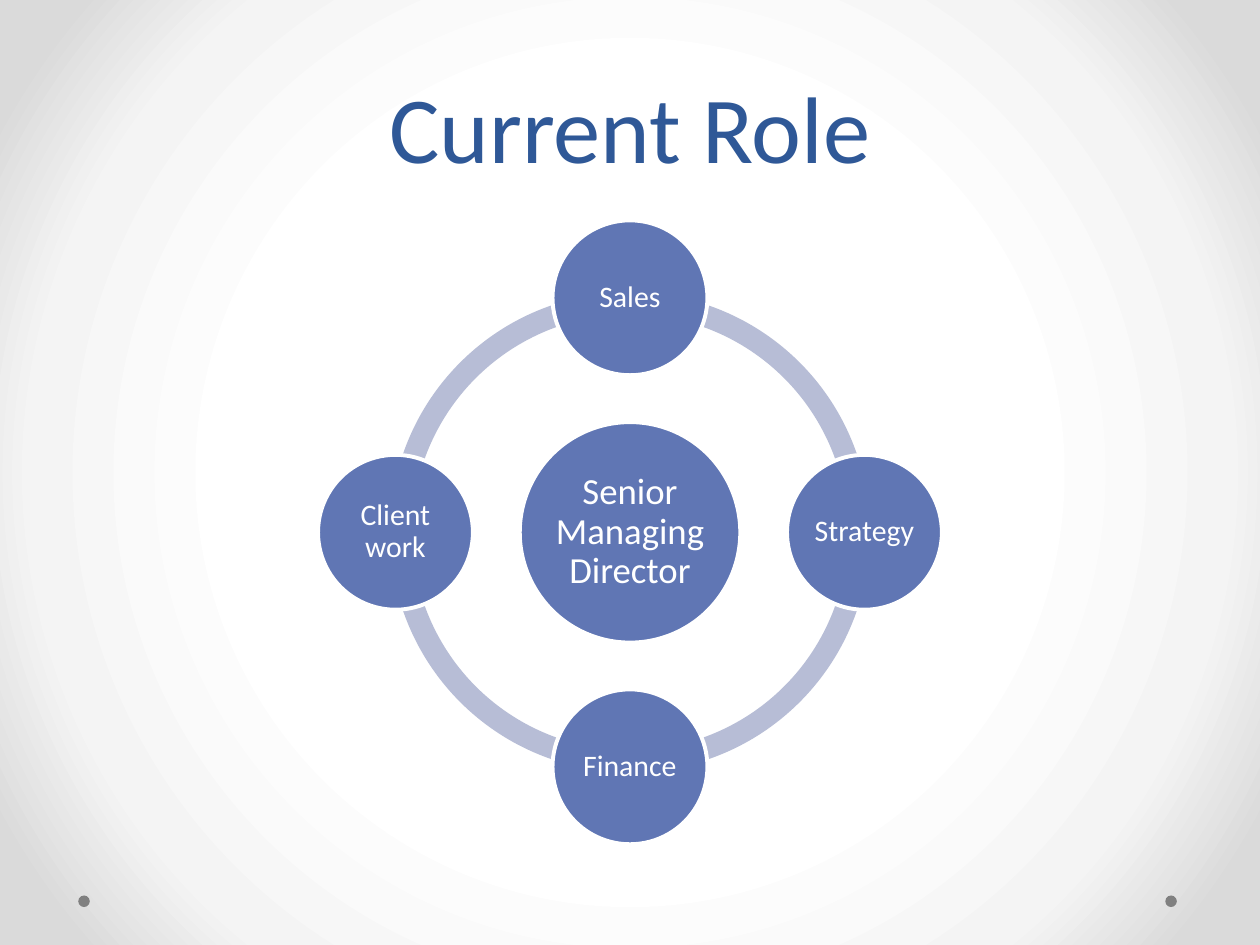
from math import cos, pi, sin

from lxml.etree import SubElement
from pptx import Presentation
from pptx.dml.color import RGBColor
from pptx.enum.shapes import MSO_SHAPE
from pptx.enum.text import MSO_ANCHOR, PP_ALIGN
from pptx.oxml.ns import qn
from pptx.util import Pt

WHITE = RGBColor(0xFF, 0xFF, 0xFF)
BLUE = RGBColor(0x60, 0x76, 0xB4)
PALE_BLUE = RGBColor(0xB7, 0xBD, 0xD6)
NAVY = RGBColor(0x2F, 0x58, 0x97)
GREY = RGBColor(0x80, 0x80, 0x80)
BACKGROUND = [(50, "FFFFFF"), (76, "F4F4F4"), (92, "DADADA")]

CENTRE_X, CENTRE_Y = 360, 304.2
HUB_SIZE, ROLE_SIZE, RING_SIZE, ORBIT = 126, 88.5, 274.4, 134
ROLES = ["Sales", "Strategy", "Finance", "Client work"]
QUARTER = 54


def set_text(shape, text, size, color, spacing=0.9, inset=1.5,
             anchor=MSO_ANCHOR.MIDDLE, font="Calibri"):
    tf = shape.text_frame
    tf.word_wrap = True
    tf.vertical_anchor = anchor
    tf.margin_left = tf.margin_right = Pt(inset)
    tf.margin_top = tf.margin_bottom = Pt(inset)
    p = tf.paragraphs[0]
    p.alignment = PP_ALIGN.CENTER
    p.line_spacing = spacing
    r = p.add_run()
    r.text = text
    r.font.name = font
    r.font.size = Pt(size)
    r.font.color.rgb = color


class RoleSlide:
    """Draw the elements of a radial role diagram on one slide."""

    def __init__(self, prs):
        self.s = prs.slides.add_slide(prs.slide_layouts[6])
        self.diagram = None

    def background(self, stops):
        fill = self.s.background.fill
        fill.gradient()
        grad = self.s.element.find(".//" + qn("a:gradFill"))
        for child in list(grad):
            grad.remove(child)
        stop_list = SubElement(grad, qn("a:gsLst"))
        for position, color in stops:
            stop = SubElement(stop_list, qn("a:gs"), pos=str(position * 1000))
            SubElement(stop, qn("a:srgbClr"), val=color)
        shade = SubElement(grad, qn("a:path"), path="circle")
        SubElement(shade, qn("a:fillToRect"),
                   {side: "50000" for side in "ltrb"})

    def title(self, text):
        box = self.s.shapes.add_textbox(Pt(36), Pt(12), Pt(648), Pt(96))
        set_text(box, text, 54, NAVY, spacing=Pt(58), inset=3.6,
                 anchor=MSO_ANCHOR.BOTTOM)

    def start_diagram(self):
        self.diagram = self.s.shapes.add_group_shape()

    def centred(self, kind, x, y, size, color, shapes=None):
        shapes = shapes or self.s.shapes
        shape = shapes.add_shape(kind, Pt(x - size / 2), Pt(y - size / 2),
                                 Pt(size), Pt(size))
        shape.shadow.inherit = False
        shape.fill.solid()
        shape.fill.fore_color.rgb = color
        shape.line.fill.background()
        return shape

    def dot(self, x):
        self.centred(MSO_SHAPE.OVAL, x, 515, 6.6, GREY)

    def arc(self, start, end):
        arc = self.centred(MSO_SHAPE.BLOCK_ARC, CENTRE_X, CENTRE_Y, RING_SIZE,
                           PALE_BLUE, self.diagram.shapes)
        for i, value in enumerate((start, end, 0.046)):
            arc.adjustments[i] = value

    def circle(self, text, x, y, size, font_size):
        circle = self.centred(MSO_SHAPE.OVAL, x, y, size, BLUE,
                              self.diagram.shapes)
        circle.line.color.rgb = WHITE
        circle.line.width = Pt(2.25)
        set_text(circle, text, font_size, WHITE)


def main():
    prs = Presentation()
    prs.slide_width, prs.slide_height = Pt(720), Pt(540)
    slide = RoleSlide(prs)
    slide.background(BACKGROUND)
    for x in (669.2, 48):
        slide.dot(x)
    slide.start_diagram()
    for i in range(4):
        slide.arc(i * QUARTER, (i + 1) % 4 * QUARTER)
    slide.circle("Senior Managing Director", CENTRE_X, CENTRE_Y, HUB_SIZE, 21)
    for i, role in enumerate(ROLES):
        angle = i * 2 * pi / len(ROLES)
        slide.circle(role, CENTRE_X + ORBIT * sin(angle),
                     CENTRE_Y - ORBIT * cos(angle), ROLE_SIZE, 17)
    slide.title("Current Role")
    prs.save("out.pptx")


if __name__ == "__main__":
    main()
